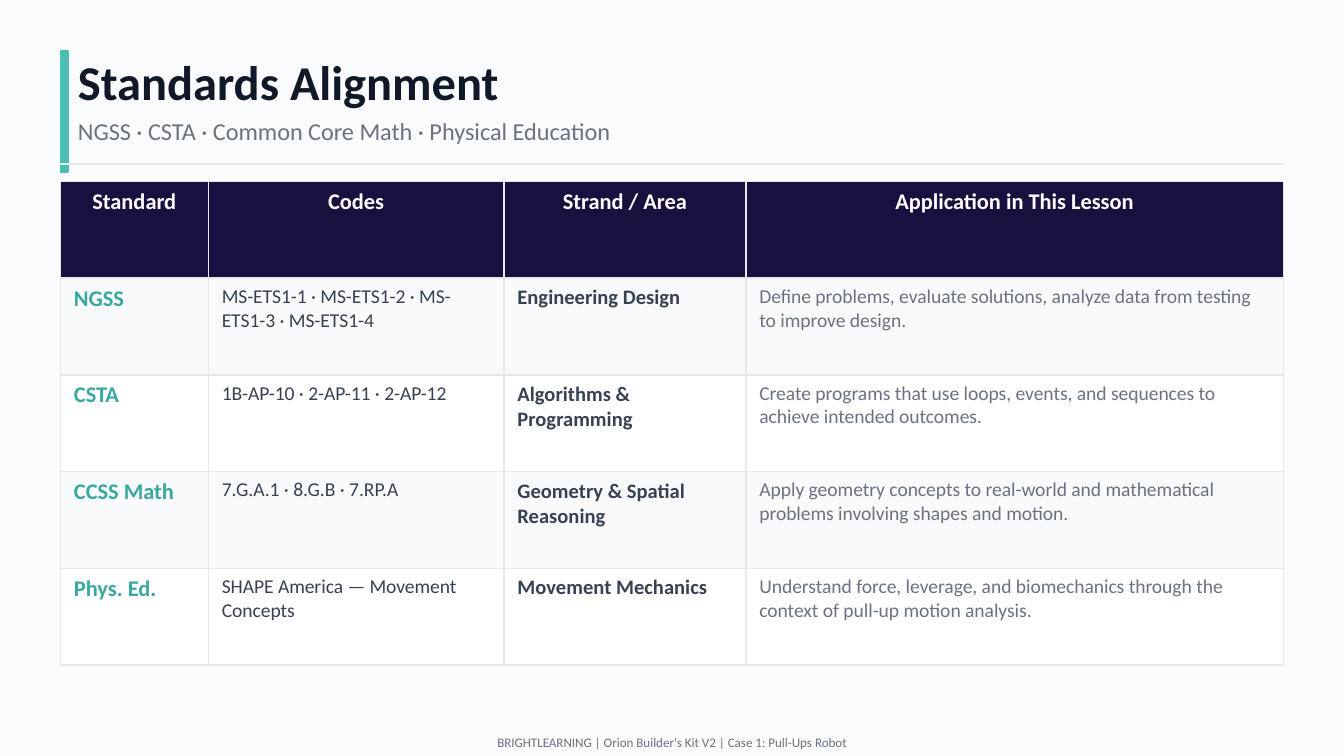
from lxml import etree
from pptx import Presentation
from pptx.dml.color import RGBColor
from pptx.enum.shapes import MSO_CONNECTOR, MSO_SHAPE
from pptx.enum.text import MSO_ANCHOR, MSO_AUTO_SIZE, PP_ALIGN
from pptx.oxml.ns import qn
from pptx.util import Emu, Pt

LEFT, CENTER = PP_ALIGN.LEFT, PP_ALIGN.CENTER
MIDDLE = MSO_ANCHOR.MIDDLE
NO_AUTOFIT = MSO_AUTO_SIZE.NONE
RECTANGLE = MSO_SHAPE.RECTANGLE
STRAIGHT = MSO_CONNECTOR.STRAIGHT

PX = 4572  # EMU per px, 200 px to the inch
COLORS = {
    "page": "FAFBFC", "accent": "4BBDB3", "title": "111827", "muted": "6B7280",
    "rule": "E5E7EB", "header": "1A1040", "white": "FFFFFF", "band": "F9FAFB",
    "standard": "3AA89E", "body": "374151",
}


def px(length):
    return Emu(length * PX)


def rgb(name):
    return RGBColor.from_string(COLORS[name])


class SlideBuilder:
    font = "Calibri"

    def __init__(self, slide):
        self.slide = slide
        slide.background.fill.solid()
        slide.background.fill.fore_color.rgb = rgb("page")

    def add_text(self, frame, text, size, color, bold=False, align=LEFT):
        paragraph = frame.paragraphs[0]
        paragraph.alignment = align
        run = paragraph.add_run()
        run.text = text
        run.font.name = self.font
        run.font.size = Pt(size)
        run.font.bold = bold
        run.font.color.rgb = rgb(color)

    def fill_frame(self, frame, *text_style):
        frame.margin_left = frame.margin_right = 0
        frame.margin_top = frame.margin_bottom = 0
        frame.word_wrap = True
        frame.auto_size = NO_AUTOFIT
        frame.vertical_anchor = MIDDLE
        self.add_text(frame, *text_style)

    def title(self, box, *text_style):
        heading = self.slide.shapes.title
        heading.left, heading.top, heading.width, heading.height = map(px, box)
        self.fill_frame(heading.text_frame, *text_style)

    def text(self, box, *text_style):
        textbox = self.slide.shapes.add_textbox(*map(px, box))
        self.fill_frame(textbox.text_frame, *text_style)

    def bar(self, box, color):
        shape = self.slide.shapes.add_shape(RECTANGLE, *map(px, box))
        shape.shadow.inherit = False
        shape.fill.solid()
        shape.fill.fore_color.rgb = rgb(color)
        shape.line.color.rgb = rgb(color)
        shape.line.width = Pt(1)

    def rule(self, left, right, y, color):
        line = self.slide.shapes.add_connector(STRAIGHT, px(left), px(y), px(right), px(y))
        line.line.color.rgb = rgb(color)
        line.line.width = Pt(1)
        etree.SubElement(line._element.spPr, qn("a:effectLst"))

    def cell(self, cell, fill, *text_style):
        properties = cell._tc.get_or_add_tcPr()
        for side in ("a:lnL", "a:lnR", "a:lnT", "a:lnB"):
            border = etree.SubElement(properties, qn(side), w=str(Pt(1)))
            solid = etree.SubElement(border, qn("a:solidFill"))
            etree.SubElement(solid, qn("a:srgbClr"), val=COLORS["rule"])
        cell.fill.solid()
        cell.fill.fore_color.rgb = rgb(fill)
        self.add_text(cell.text_frame, *text_style)

    def table(self, left, top, widths, row_height, headers, rows, column_styles):
        table = self.slide.shapes.add_table(
            len(rows) + 1, len(headers), px(left), px(top),
            px(sum(widths)), px(row_height * (len(rows) + 1))).table
        for column, width in zip(table.columns, widths):
            column.width = px(width)
        for c, header in enumerate(headers):
            self.cell(table.cell(0, c), "header", header, 12, "white", True, CENTER)
        for r, row in enumerate(rows, start=1):
            fill = "band" if r % 2 else "white"
            for c, (text, style) in enumerate(zip(row, column_styles)):
                self.cell(table.cell(r, c), fill, text, *style)


HEADERS = ["Standard", "Codes", "Strand / Area", "Application in This Lesson"]
COLUMN_STYLES = [(12, "standard", True), (10.5, "body"), (11, "body", True), (10.5, "muted")]
STANDARDS = [
    ("NGSS", "MS-ETS1-1 · MS-ETS1-2 · MS-ETS1-3 · MS-ETS1-4", "Engineering Design",
     "Define problems, evaluate solutions, analyze data from testing to improve design."),
    ("CSTA", "1B-AP-10 · 2-AP-11 · 2-AP-12", "Algorithms & Programming",
     "Create programs that use loops, events, and sequences to achieve intended outcomes."),
    ("CCSS Math", "7.G.A.1 · 8.G.B · 7.RP.A", "Geometry & Spatial Reasoning",
     "Apply geometry concepts to real-world and mathematical problems involving "
     "shapes and motion."),
    ("Phys. Ed.", "SHAPE America — Movement Concepts", "Movement Mechanics",
     "Understand force, leverage, and biomechanics through the context of "
     "pull-up motion analysis."),
]


def main():
    deck = Presentation()
    deck.slide_width, deck.slide_height = px(2000), px(1125)
    title_only = deck.slide_layouts[5]
    page = SlideBuilder(deck.slides.add_slide(title_only))

    # Heading
    page.bar((90, 76, 12, 180), "accent")
    page.title((116, 70, 1700, 100), "Standards Alignment", 26, "title", True)
    page.text((116, 164, 1700, 60), "NGSS · CSTA · Common Core Math · Physical Education",
              13, "muted")
    page.rule(90, 1910, 244, "rule")

    # Standards table
    page.table(90, 270, (220, 440, 360, 800), 144, HEADERS, STANDARDS, COLUMN_STYLES)

    # Footer
    page.text((0, 1084, 2000, 40), "BRIGHTLEARNING | Orion Builder's Kit V2 | Case 1: Pull-Ups Robot",
              7, "muted", False, CENTER)

    deck.save("out.pptx")


if __name__ == "__main__":
    main()
